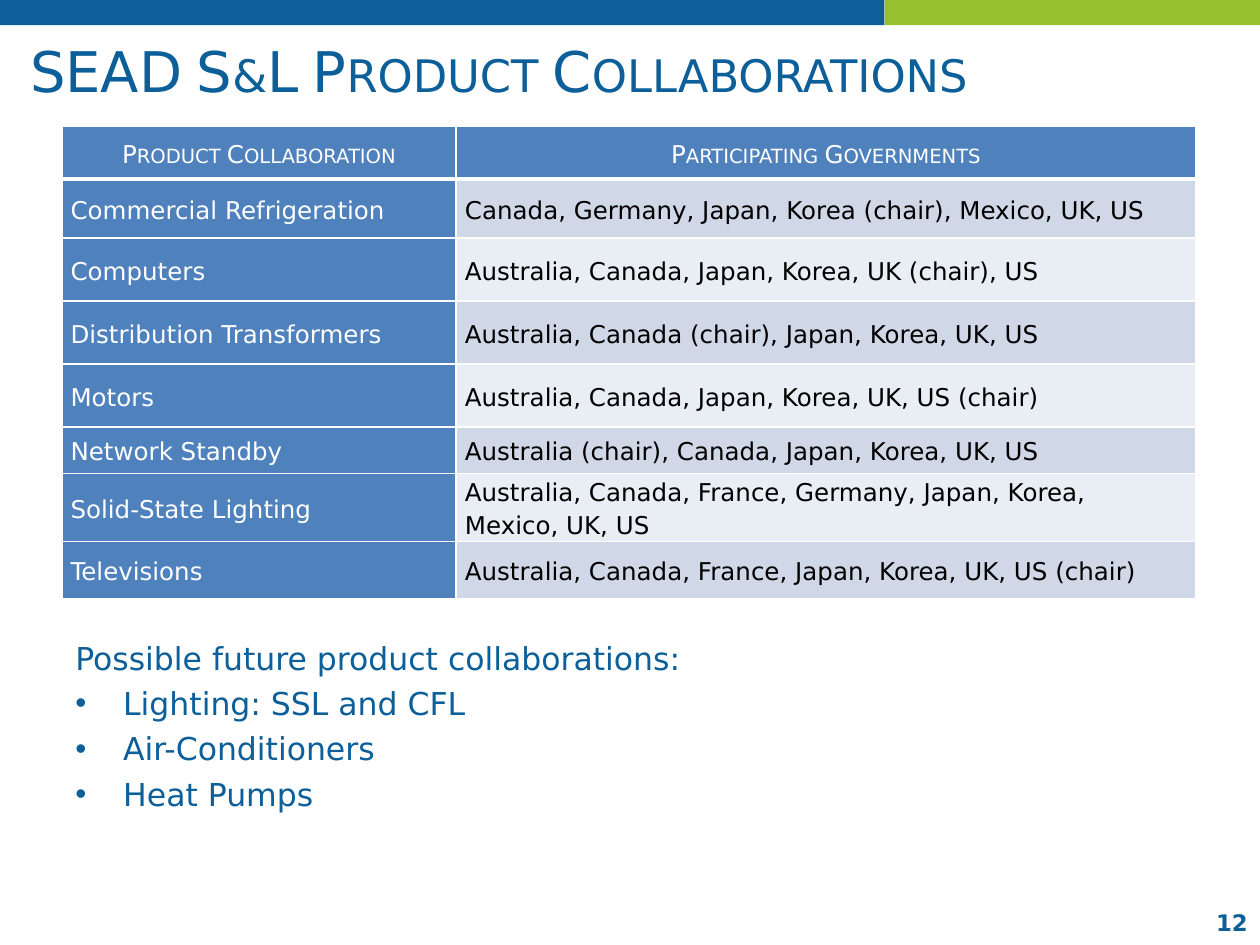
from lxml import etree
from pptx import Presentation
from pptx.dml.color import RGBColor
from pptx.enum.shapes import MSO_SHAPE
from pptx.enum.text import MSO_ANCHOR, PP_ALIGN
from pptx.oxml.ns import qn
from pptx.util import Inches, Pt

RECTANGLE = MSO_SHAPE.RECTANGLE
MIDDLE = MSO_ANCHOR.MIDDLE
LEFT, CENTER, RIGHT = PP_ALIGN.LEFT, PP_ALIGN.CENTER, PP_ALIGN.RIGHT

# Content
TITLE = "SEAD S&L Product Collaborations"
PAGE_NUMBER = "12"
HEADER = ("Product Collaboration", "Participating Governments")
COLLABORATIONS = [
    ("Commercial Refrigeration", "Canada, Germany, Japan, Korea (chair), Mexico, UK, US"),
    ("Computers", "Australia, Canada, Japan, Korea, UK (chair), US"),
    ("Distribution Transformers", "Australia, Canada (chair), Japan, Korea, UK, US"),
    ("Motors", "Australia, Canada, Japan, Korea, UK, US (chair)"),
    ("Network Standby", "Australia (chair), Canada, Japan, Korea, UK, US"),
    ("Solid-State Lighting", "Australia, Canada, France, Germany, Japan, Korea, Mexico, UK, US"),
    ("Televisions", "Australia, Canada, France, Japan, Korea, UK, US (chair)"),
]
FUTURE_HEADING = "Possible future product collaborations:"
FUTURE_PRODUCTS = ["Lighting: SSL and CFL", "Air-Conditioners", "Heat Pumps"]

# Style and grid, in inches
FONT = "DejaVu Sans"
BLUE, GREEN, WHITE, BLACK = "0C5F99", "97C02F", "FFFFFF", "000000"
TABLE_BLUE, STRIPES = "4F81BD", ("E9EDF4", "D0D8E8")
WIDTH, HEIGHT = 10, 7.5
BAND_SPLIT, BAND_HEIGHT = 7.02, 0.2
COLUMNS = [3.13, 5.87]
ROWS = [0.42, 0.47, 0.5, 0.5, 0.5, 0.37, 0.53, 0.46]
INDENT = 0.38


def rgb(color):
    return RGBColor.from_string(color)


def style(paragraph, size, color, align=LEFT, bold=False):
    paragraph.alignment = align
    font = paragraph.font
    font.name, font.size, font.bold = FONT, Pt(size), bold
    font.color.rgb = rgb(color)


def small_caps(paragraph):
    for run in paragraph.runs:
        run._r.get_or_add_rPr().set("cap", "small")


def add_text_box(slide, left, top, width, height):
    box = slide.shapes.add_textbox(*map(Inches, (left, top, width, height)))
    box.text_frame.word_wrap = True
    return box.text_frame


def add_band(slide, left, width, color):
    band = slide.shapes.add_shape(
        RECTANGLE, Inches(left), 0, Inches(width), Inches(BAND_HEIGHT))
    band.shadow.inherit = False
    band.fill.solid()
    band.fill.fore_color.rgb = rgb(color)
    band.line.fill.background()


def add_borders(cell, widths):
    properties = cell._tc.get_or_add_tcPr()
    for side, width in widths.items():
        line = etree.SubElement(properties, qn("a:ln" + side), w=str(Pt(width)))
        fill = etree.SubElement(line, qn("a:solidFill"))
        etree.SubElement(fill, qn("a:srgbClr"), val=WHITE)


def fill_cell(cell, text, row, column):
    is_header = row == 0
    is_label = is_header or column == 0
    add_borders(cell, {"L": 1, "R": 1, "T": 3 if row == 1 else 1,
                       "B": 3 if is_header else 1})
    cell.fill.solid()
    cell.fill.fore_color.rgb = rgb(TABLE_BLUE if is_label else STRIPES[row % 2])
    cell.vertical_anchor = MIDDLE
    cell.margin_left = cell.margin_right = Inches(0.07)
    cell.margin_top = cell.margin_bottom = 0
    cell.text = text
    paragraph = cell.text_frame.paragraphs[0]
    paragraph.line_spacing = 1.15
    paragraph.space_after = Pt(10)
    style(paragraph, 14, WHITE if is_label else BLACK, CENTER if is_header else LEFT)
    if is_header:
        small_caps(paragraph)


def add_collaboration_table(slide):
    table = slide.shapes.add_table(
        len(ROWS), len(COLUMNS), Inches(0.49), Inches(1),
        Inches(sum(COLUMNS)), Inches(sum(ROWS))).table
    table.first_row = table.horz_banding = False
    for column, width in zip(table.columns, COLUMNS):
        column.width = Inches(width)
    for row, height in zip(table.rows, ROWS):
        row.height = Inches(height)
    for row, texts in enumerate([HEADER] + COLLABORATIONS):
        for column, text in enumerate(texts):
            fill_cell(table.cell(row, column), text, row, column)


def add_future_list(slide):
    frame = add_text_box(slide, 0.5, 5, 9.33, 1.67)
    frame.margin_top = Inches(0.07)
    for index, text in enumerate([FUTURE_HEADING] + FUTURE_PRODUCTS):
        paragraph = frame.add_paragraph() if index else frame.paragraphs[0]
        paragraph.text = text
        if index:
            paragraph.space_before = Pt(4.3)
            properties = paragraph._p.get_or_add_pPr()
            properties.set("marL", str(Inches(INDENT)))
            properties.set("indent", str(-Inches(INDENT)))
            etree.SubElement(properties, qn("a:buFont"), typeface="Arial")
            etree.SubElement(properties, qn("a:buChar"), char="•")
        style(paragraph, 18, BLUE)


def main():
    presentation = Presentation()
    presentation.slide_width, presentation.slide_height = Inches(WIDTH), Inches(HEIGHT)
    slide = presentation.slides.add_slide(presentation.slide_layouts[6])

    # Page number and top band
    number = add_text_box(slide, 0, 7.16, WIDTH, 0.32)
    number.text = PAGE_NUMBER
    style(number.paragraphs[0], 13, BLUE, RIGHT, bold=True)
    add_band(slide, 0, BAND_SPLIT, BLUE)
    add_band(slide, BAND_SPLIT, WIDTH - BAND_SPLIT, GREEN)

    # Title
    title = add_text_box(slide, 0.14, 0.22, 9.69, 0.74)
    title.vertical_anchor = MIDDLE
    title.text = TITLE
    title.paragraphs[0].line_spacing = 0.9
    style(title.paragraphs[0], 32, BLUE)
    small_caps(title.paragraphs[0])

    # Body
    add_collaboration_table(slide)
    add_future_list(slide)
    presentation.save("out.pptx")


if __name__ == "__main__":
    main()
